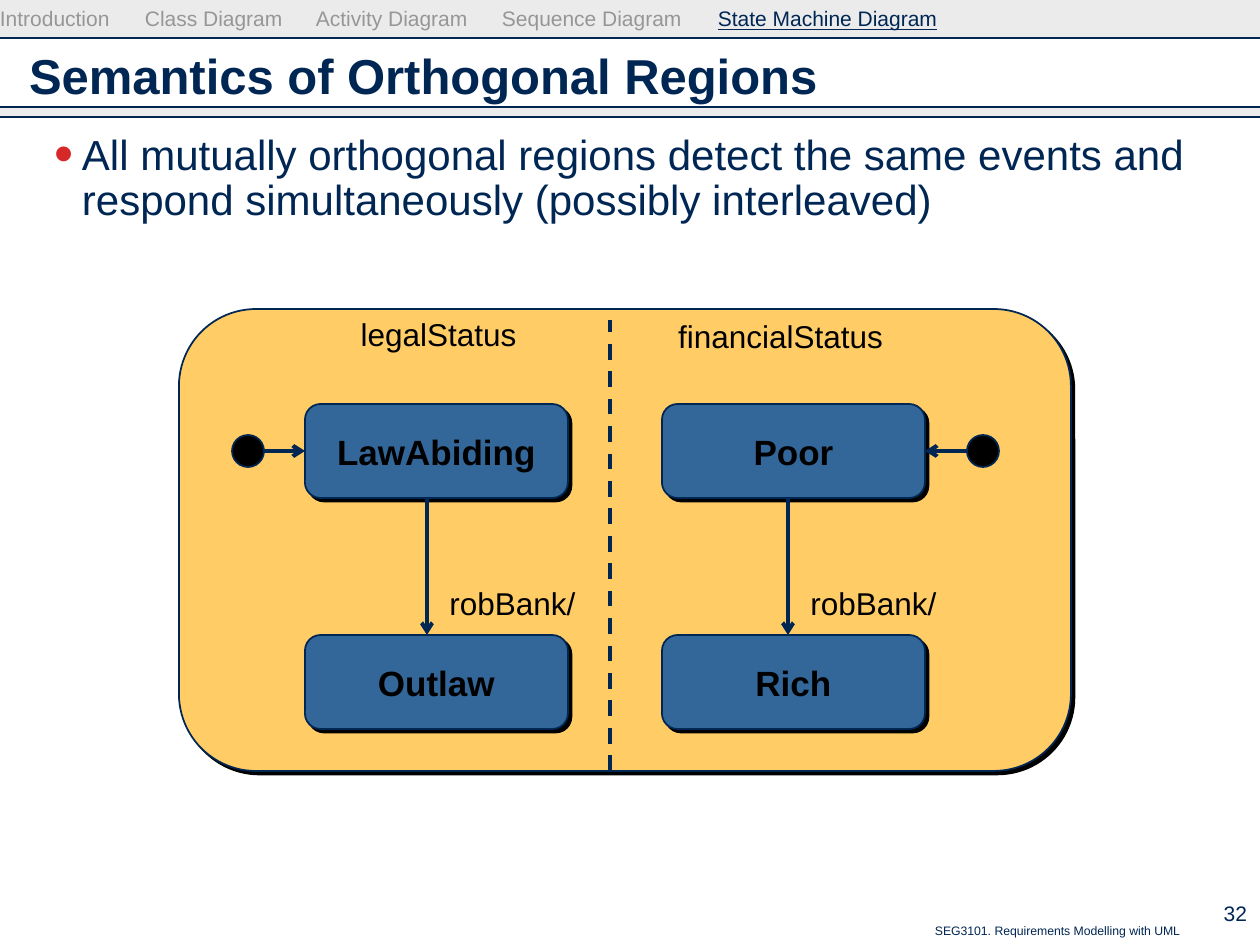
from pptx import Presentation
from pptx.dml.color import RGBColor
from pptx.enum.dml import MSO_LINE
from pptx.enum.shapes import MSO_CONNECTOR, MSO_SHAPE
from pptx.enum.text import MSO_ANCHOR, PP_ALIGN
from pptx.oxml.ns import qn
from pptx.util import Pt
from lxml import etree

RECT, ROUND, OVAL = MSO_SHAPE.RECTANGLE, MSO_SHAPE.ROUNDED_RECTANGLE, MSO_SHAPE.OVAL
STRAIGHT, DASH = MSO_CONNECTOR.STRAIGHT, MSO_LINE.DASH
TOP, MIDDLE = MSO_ANCHOR.TOP, MSO_ANCHOR.MIDDLE
LEFT, CENTER, RIGHT = PP_ALIGN.LEFT, PP_ALIGN.CENTER, PP_ALIGN.RIGHT
PX = 914400 / 126

THEME = {
    "font": "Arial",
    "navy": RGBColor.from_string("002654"),
    "black": RGBColor.from_string("000000"),
    "band": RGBColor.from_string("CDCDCD"),
    "muted": RGBColor.from_string("969696"),
    "region": RGBColor.from_string("FFCC66"),
    "state": RGBColor.from_string("336699"),
    "bullet": "D62828",
    "title_pt": 28, "body_pt": 24, "state_pt": 20, "label_pt": 18,
    "nav_pt": 12, "footer_pt": 7,
}

prs = Presentation()
prs.slide_width, prs.slide_height = round(1260 * PX), round(945 * PX)
s = prs.slides.add_slide(prs.slide_layouts[6])


def add_box(box, text="", size=None, color="navy", bold=False, align=LEFT,
            anchor=TOP, inset=(0, 0), shape=None, fill=None, shadow=False):
    """Add a text box, or a preset shape when one is given."""
    at = [round(v * PX) for v in box]
    if shape is None:
        sp = s.shapes.add_textbox(*at)
    else:
        sp = s.shapes.add_shape(shape, *at)
        sp.shadow.inherit = False
        sp.fill.solid()
        sp.fill.fore_color.rgb = THEME[fill]
        sp.line.color.rgb = THEME["navy"]
        sp.line.width = Pt(1)
    if shadow:
        effects = sp._element.spPr.find(qn("a:effectLst"))
        outer = etree.SubElement(effects, qn("a:outerShdw"), dist=str(Pt(2.8)),
                                 dir="2700000", algn="ctr", rotWithShape="0")
        etree.SubElement(outer, qn("a:srgbClr"), val="000000")
    if text:
        tf = sp.text_frame
        tf.word_wrap = True
        tf.vertical_anchor = anchor
        tf.margin_left = tf.margin_right = round(inset[0] * PX)
        tf.margin_top = tf.margin_bottom = round(inset[1] * PX)
        p = tf.paragraphs[0]
        p.text = text
        p.alignment = align
        for r in p.runs:
            r.font.name, r.font.size, r.font.bold = THEME["font"], Pt(size), bold
            r.font.color.rgb = THEME[color]
    return sp


def add_line(x1, y1, x2, y2, width=2.25, arrow=False):
    line = s.shapes.add_connector(STRAIGHT, *[round(v * PX) for v in (x1, y1, x2, y2)])
    line.line.color.rgb = THEME["navy"]
    line.line.width = Pt(width)
    if arrow:
        etree.SubElement(line.line._get_or_add_ln(), qn("a:tailEnd"), type="arrow")
    etree.SubElement(line._element.spPr, qn("a:effectLst"))
    return line


# Header bands, rules and footer
for top, height in ((0, 38), (107, 9)):
    band = add_box((0, top, 1260, height), shape=RECT, fill="band")
    band.line.fill.background()
    color = band._element.spPr.find(qn("a:solidFill"))[0]
    etree.SubElement(color, qn("a:alpha"), val="40000")
for y in (38, 107, 117):
    add_line(0, y, 1260, y, width=0.75)
add_box((410, 917, 782, 28), "SEG3101. Requirements Modelling with UML",
        THEME["footer_pt"], align=RIGHT, inset=(12, 6))
add_box((1172, 892, 88, 43), "32", THEME["nav_pt"], align=RIGHT,
        anchor=MIDDLE, inset=(13, 6))

# Section navigation, one tab stop per section
nav = add_box((0, 6, 1008, 32), "Introduction", THEME["nav_pt"], "muted")
p = nav.text_frame.paragraphs[0]
tabs = etree.SubElement(p._p.get_or_add_pPr(), qn("a:tabLst"))
sections = ((145, "Class Diagram"), (316, "Activity Diagram"),
            (502, "Sequence Diagram"), (718, "State Machine Diagram"))
for x, name in sections:
    etree.SubElement(tabs, qn("a:tab"), pos=str(round(x * PX)), algn="l")
    for text in ("\t", name):
        r = p.add_run()
        r.text = text
        r.font.name, r.font.size = THEME["font"], Pt(THEME["nav_pt"])
        r.font.color.rgb = THEME["muted"]
r.font.color.rgb = THEME["navy"]
r.font.underline = True

# Title and body
add_box((16, 33, 1227, 83), "Semantics of Orthogonal Regions", THEME["title_pt"],
        bold=True, anchor=MIDDLE, inset=(13, 6))
body = add_box((16, 127, 1227, 769), "All mutually orthogonal regions detect the same "
               "events and respond simultaneously (possibly interleaved)",
               THEME["body_pt"], inset=(13, 6))
p = body.text_frame.paragraphs[0]
p.line_spacing = Pt(26)
pPr = p._p.get_or_add_pPr()
pPr.set("marL", str(round(53 * PX)))
pPr.set("indent", str(round(-28 * PX)))
bullet_color = etree.SubElement(pPr, qn("a:buClr"))
etree.SubElement(bullet_color, qn("a:srgbClr"), val=THEME["bullet"])
etree.SubElement(pPr, qn("a:buSzPct"), val="130000")
etree.SubElement(pPr, qn("a:buFont"), typeface=THEME["font"])
etree.SubElement(pPr, qn("a:buChar"), char="•")

# Composite state split into two orthogonal regions
add_box((179, 309, 892, 462), shape=ROUND, fill="region", shadow=True)
add_line(610, 771, 610, 320).line.dash_style = DASH

# label box, state left, state names, dot left, dot edge, entry side, transition x
regions = (
    ((348, 309, 181, 50), "legalStatus", 305, ("LawAbiding", "Outlaw"), 232, 264, 1, 427),
    ((665, 311, 231, 50), "financialStatus", 662, ("Poor", "Rich"), 967, 967, 3, 788),
)
for label_box, label, left, names, dot_left, dot_edge, side, x in regions:
    add_box(label_box, label, THEME["label_pt"], "black", align=CENTER, anchor=MIDDLE)
    first, second = [
        add_box((left, top, 263, 94), name, THEME["state_pt"], "black", True, CENTER,
                MIDDLE, shape=ROUND, fill="state", shadow=True)
        for top, name in zip((404, 635), names)]
    add_box((dot_left, 435, 32, 32), shape=OVAL, fill="black")
    entry_x = left if side == 1 else left + 263
    add_line(dot_edge, 451, entry_x, 451, arrow=True).end_connect(first, side)
    add_line(x, 498, x, 635, arrow=True)
    add_box((x + 10, 578, 151, 50), "robBank/", THEME["label_pt"], "black",
            align=CENTER, anchor=MIDDLE)

prs.save("out.pptx")
